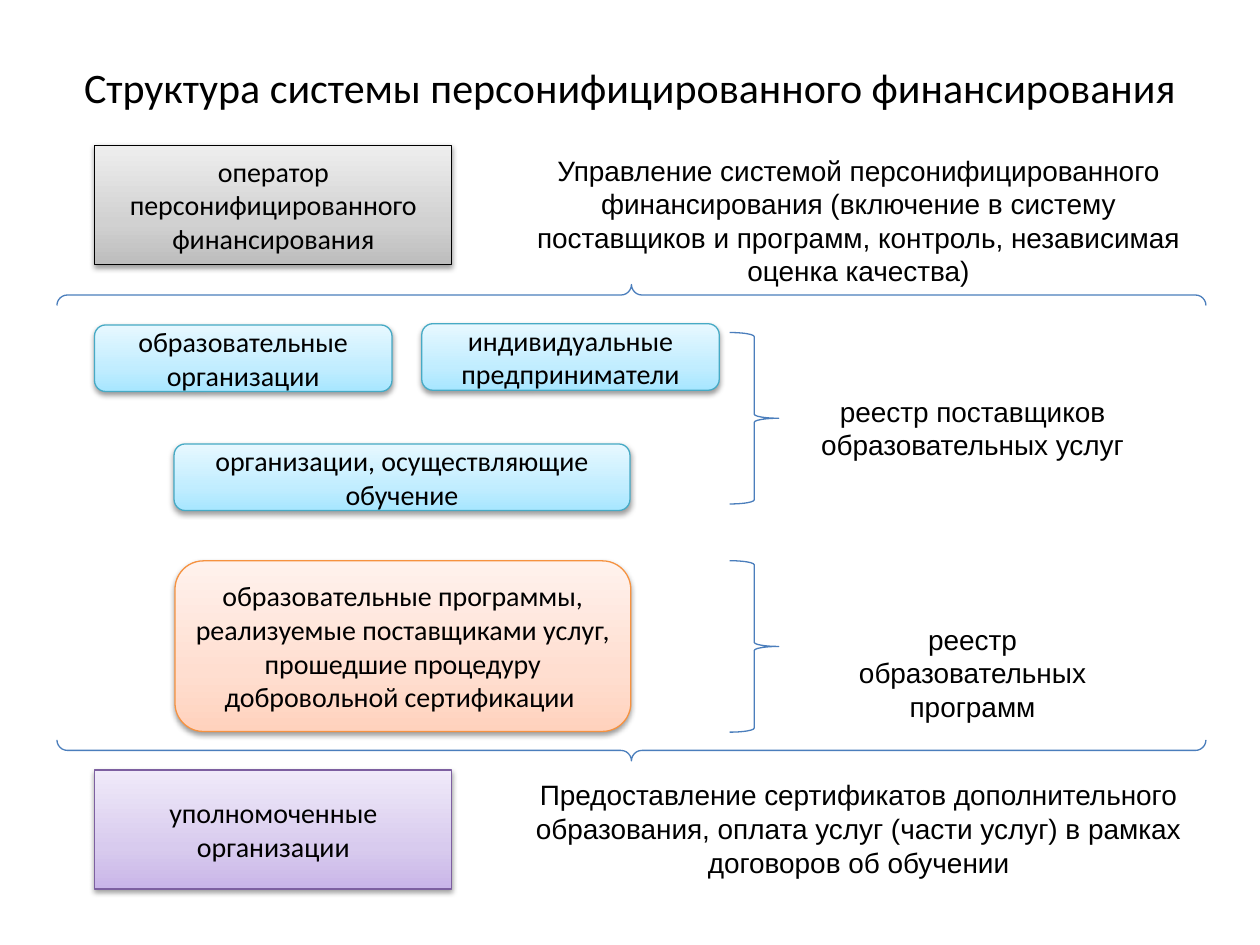
from copy import deepcopy
from dataclasses import dataclass

from pptx import Presentation
from pptx.dml.color import RGBColor
from pptx.enum.shapes import MSO_SHAPE as Shape
from pptx.enum.text import MSO_ANCHOR as Anchor, MSO_AUTO_SIZE as AutoSize, PP_ALIGN as Align
from pptx.oxml import parse_xml
from pptx.oxml.ns import nsdecls, qn
from pptx.util import Pt


@dataclass(frozen=True)
class Theme:
    ink: str = "000000"
    brace: str = "4B7EBC"
    title_size: float = 24
    body_size: float = 16
    line_width: float = 0.75
    box_font: str = "Calibri"
    label_font: str = "Arial"
    # Outline, then gradient colours from bottom to top
    gray: tuple = ("000000", "BDBDBD", "D1D1D1", "EEEEEE")
    violet: tuple = ("7D60A0", "C9B5E8", "D8CBEE", "F0EAF9")
    blue: tuple = ("46AAC5", "A7E6FF", "C1EDFF", "E7F8FF")
    orange: tuple = ("F69240", "FFD2BD", "FFDED0", "FFF2ED")


THEME = Theme()
SHADOW = (
    f'<a:outerShdw {nsdecls("a")} blurRad="40000" dist="20000" dir="5400000" rotWithShape="0">'
    '<a:srgbClr val="000000"><a:alpha val="38000"/></a:srgbClr></a:outerShdw>'
)


def points(box):
    return [Pt(value) for value in box]


def write(shape, text, font=THEME.label_font, size=THEME.body_size, anchor=Anchor.TOP):
    frame = shape.text_frame
    frame.word_wrap = True
    frame.auto_size = AutoSize.NONE
    frame.vertical_anchor = anchor
    para = frame.paragraphs[0]
    para.alignment = Align.CENTER
    span = para.add_run()
    span.text = text
    span.font.name = font
    span.font.size = Pt(size)
    span.font.color.rgb = RGBColor.from_string(THEME.ink)


def outline(shape, color):
    shape.line.color.rgb = RGBColor.from_string(color)
    shape.line.width = Pt(THEME.line_width)
    shape.shadow.inherit = False


def add_title(page, box, text):
    title = page.shapes.title
    title.left, title.top, title.width, title.height = points(box)
    write(title, text, font=THEME.box_font, size=THEME.title_size, anchor=Anchor.MIDDLE)


def add_card(page, box, text, palette, kind=Shape.ROUNDED_RECTANGLE):
    """Add a captioned box with a three-stop gradient and a soft shadow."""
    card = page.shapes.add_shape(kind, *points(box))
    edge, *colors = palette
    outline(card, edge)
    card.fill.gradient()
    card.fill.gradient_angle = 90
    properties = card._element.spPr
    stop_list = properties.find(".//" + qn("a:gsLst"))
    stop_list.insert(1, deepcopy(stop_list[0]))
    for stop, color, position in zip(card.fill.gradient_stops, colors, (0, 0.35, 1)):
        stop.color.rgb = RGBColor.from_string(color)
        stop.position = position
    properties.find(qn("a:effectLst")).append(parse_xml(SHADOW))
    write(card, text, font=THEME.box_font, anchor=Anchor.MIDDLE)


def add_label(page, box, text):
    write(page.shapes.add_textbox(*points(box)), text)


def add_brace(page, box, kind=Shape.RIGHT_BRACE):
    brace = page.shapes.add_shape(kind, *points(box))
    brace.fill.background()
    outline(brace, THEME.brace)
    return brace


def add_enclosing_braces(page, box):
    """Turn a brace pair so that it closes the box above and below."""
    left, top, width, height = box
    shift = (width - height) / 2
    pair = add_brace(page, (left + shift, top - shift, height, width), Shape.DOUBLE_BRACE)
    pair.rotation = 90
    pair.adjustments[0] = 0.022


def add_role(page, box, name, duty, palette):
    """Add a role box on the left and its duty on the right."""
    left, top, width, height = box
    add_card(page, (left, top, 204, height), name, palette, Shape.RECTANGLE)
    add_label(page, (left + width - 408, top + 1, 408, height - 2), duty)


def add_register(page, box, text):
    """Add a brace over the full height and a label beside its tip."""
    left, top, width, height = box
    add_brace(page, (left, top, 28, height))
    add_label(page, (left + 39.5, top + 31.7, width - 39.5, 46), text)


def add_suppliers(page, box):
    left, top, width, height = box
    card_width, card_height = 170, 38
    add_card(page, (left, top + 0.7, card_width, card_height),
             "образовательные организации", THEME.blue)
    add_card(page, (left + width - card_width, top, card_width, card_height),
             "индивидуальные предприниматели", THEME.blue)
    add_card(page, (left + 45.5, top + height - card_height, 260.5, card_height),
             "организации, осуществляющие обучение", THEME.blue)


def main():
    deck = Presentation()
    deck.slide_width, deck.slide_height = Pt(720), Pt(540)
    page = deck.slides.add_slide(deck.slide_layouts[5])

    add_title(page, (36, 21.6, 648, 55.4), "Структура системы персонифицированного финансирования")
    add_role(page, (54.2, 83, 640.4, 68), "оператор персонифицированного финансирования",
             "Управление системой персонифицированного финансирования (включение в систему "
             "поставщиков и программ, контроль, независимая оценка качества)", THEME.gray)
    add_role(page, (54.2, 440, 640.4, 68), "уполномоченные организации",
             "Предоставление сертификатов дополнительного образования, оплата услуг "
             "(части услуг) в рамках договоров об обучении", THEME.violet)
    add_enclosing_braces(page, (32.5, 162.6, 656.6, 272.2))
    add_suppliers(page, (54, 185, 357, 106.7))
    add_register(page, (417, 190, 238, 98), "реестр поставщиков образовательных услуг")
    add_card(page, (100, 320.5, 260.5, 97.5),
             "образовательные программы, реализуемые поставщиками услуг, "
             "прошедшие процедуру добровольной сертификации ", THEME.orange)
    add_register(page, (417, 320.4, 238, 98), "реестр образовательных программ")

    deck.save("out.pptx")


if __name__ == "__main__":
    main()
